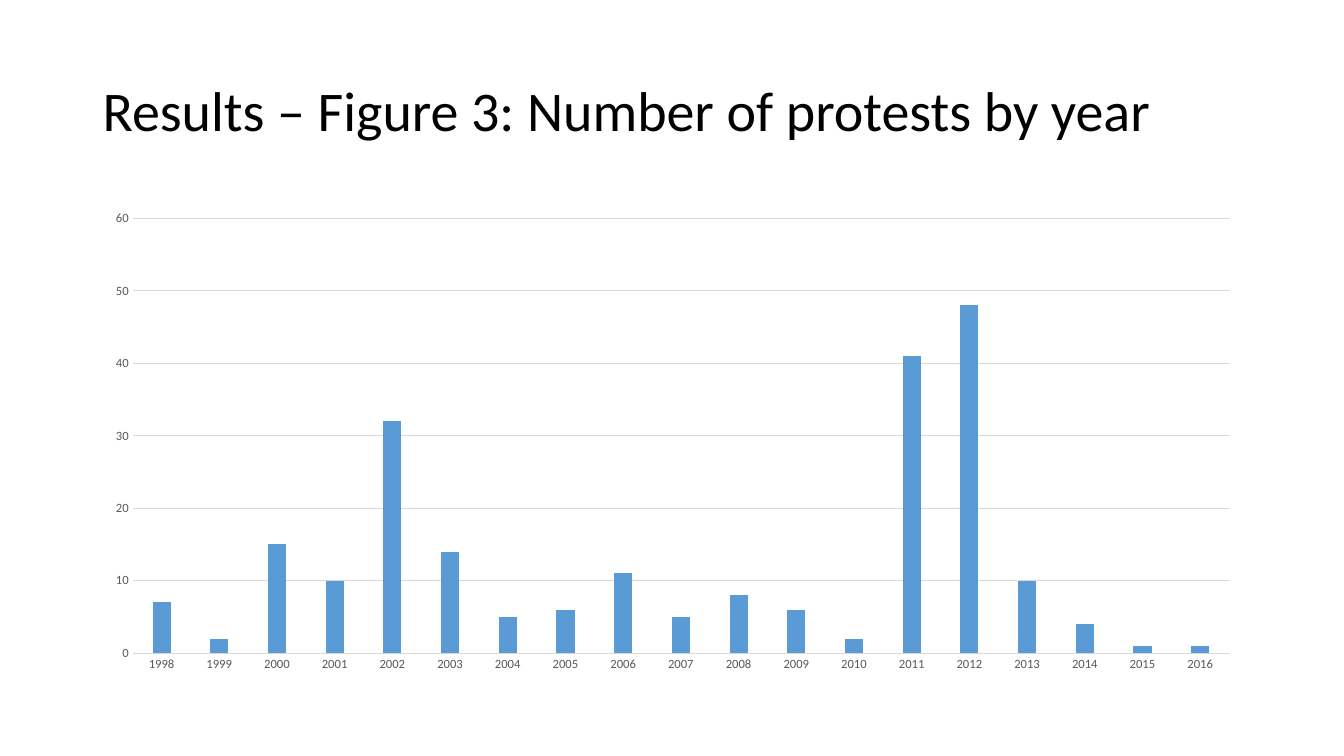
from dataclasses import dataclass

from pptx import Presentation
from pptx.chart.data import CategoryChartData
from pptx.dml.color import RGBColor
from pptx.enum.chart import XL_CHART_TYPE, XL_TICK_MARK
from pptx.enum.text import MSO_ANCHOR
from pptx.util import Inches, Pt

COLUMN = XL_CHART_TYPE.COLUMN_CLUSTERED
NO_TICK = XL_TICK_MARK.NONE
MIDDLE = MSO_ANCHOR.MIDDLE


@dataclass(frozen=True)
class Theme:
    font: str = "Calibri"
    title_size: Pt = Pt(40)
    chart_size: Pt = Pt(10)
    axis_size: Pt = Pt(9)
    rule_width: Pt = Pt(0.75)
    text: RGBColor = RGBColor(0x00, 0x00, 0x00)
    axis_text: RGBColor = RGBColor(0x59, 0x59, 0x59)
    rule: RGBColor = RGBColor(0xD9, 0xD9, 0xD9)
    bar: RGBColor = RGBColor(0x5B, 0x9B, 0xD5)


THEME = Theme()
FIRST_YEAR = 1998
PROTESTS = [7, 2, 15, 10, 32, 14, 5, 6, 11, 5, 8, 6, 2, 41, 48, 10, 4, 1, 1]


def set_font(font, size, color):
    font.name = THEME.font
    font.size = size
    font.color.rgb = color


def set_rule(line):
    line.color.rgb = THEME.rule
    line.width = THEME.rule_width


def add_title(s, box, text):
    tf = s.shapes.add_textbox(*box).text_frame
    tf.word_wrap = True
    tf.vertical_anchor = MIDDLE
    p = tf.paragraphs[0]
    p.text = text
    p.line_spacing = 0.9
    set_font(p.font, THEME.title_size, THEME.text)


def add_protest_chart(s, box):
    data = CategoryChartData()
    data.categories = [str(FIRST_YEAR + i) for i in range(len(PROTESTS))]
    data.add_series("Series 1", PROTESTS)
    chart = s.shapes.add_chart(COLUMN, *box, data).chart
    chart.has_legend = False
    chart.has_title = False
    set_font(chart.font, THEME.chart_size, THEME.text)

    # Columns
    plot = chart.plots[0]
    plot.gap_width = 219
    plot.overlap = -27
    plot.vary_by_categories = False
    fill = plot.series[0].format.fill
    fill.solid()
    fill.fore_color.rgb = THEME.bar

    # Axes and gridlines
    years, counts = chart.category_axis, chart.value_axis
    for axis in (years, counts):
        axis.major_tick_mark = axis.minor_tick_mark = NO_TICK
        set_font(axis.tick_labels.font, THEME.axis_size, THEME.axis_text)
    set_rule(years.format.line)
    counts.format.line.fill.background()
    counts.minimum_scale, counts.maximum_scale = 0, 60
    counts.major_unit = 10
    counts.has_major_gridlines = True
    set_rule(counts.major_gridlines.format.line)


def main():
    prs = Presentation()
    prs.slide_width, prs.slide_height = Inches(13.33), Inches(7.5)
    s = prs.slides.add_slide(prs.slide_layouts[6])
    left = Inches(0.92)
    add_title(s, (left, Inches(0.4), Inches(12.08), Inches(1.45)),
              "Results – Figure 3: Number of protests by year")
    add_protest_chart(s, (left, Inches(2), Inches(11.5), Inches(4.76)))
    prs.save("out.pptx")


if __name__ == "__main__":
    main()
